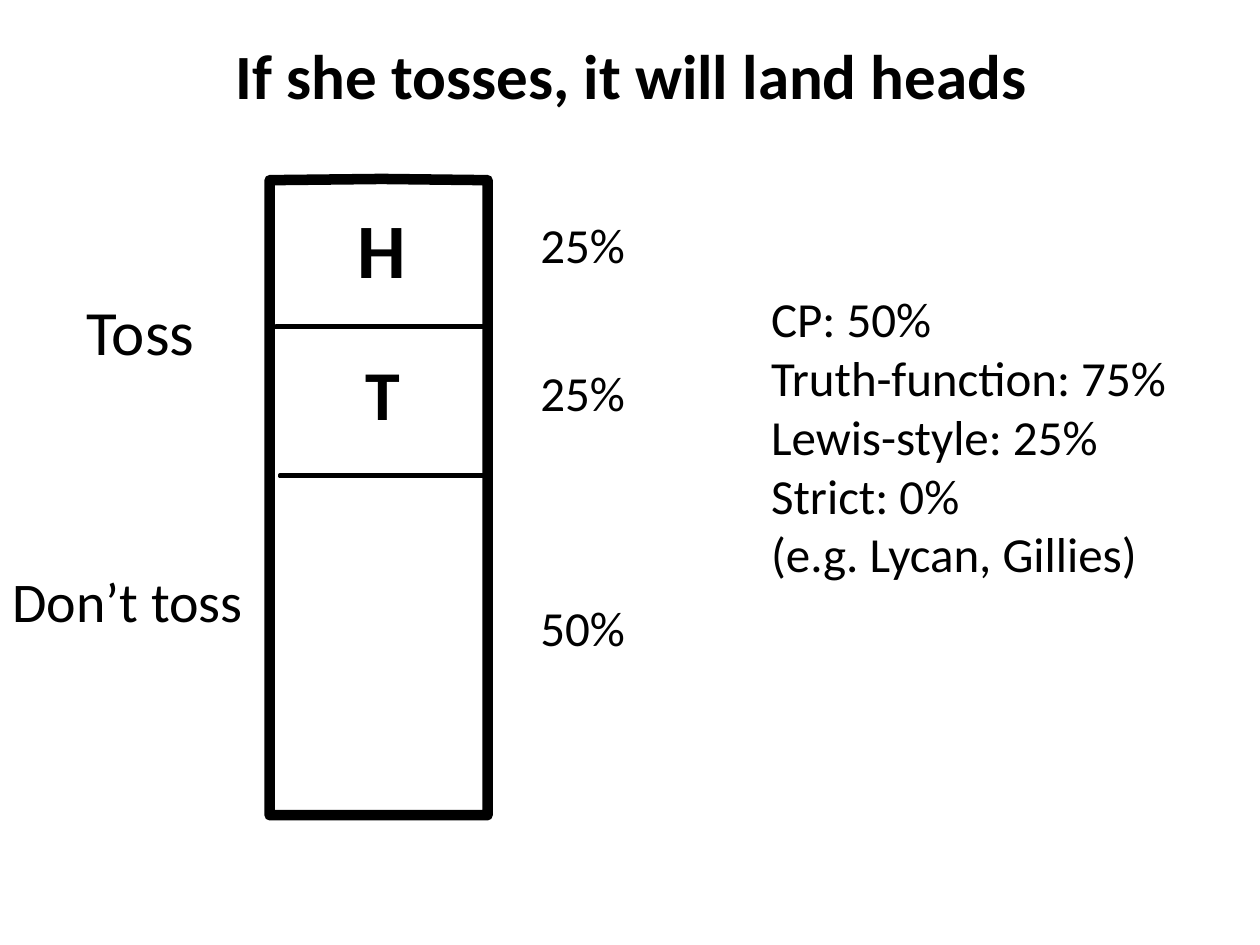
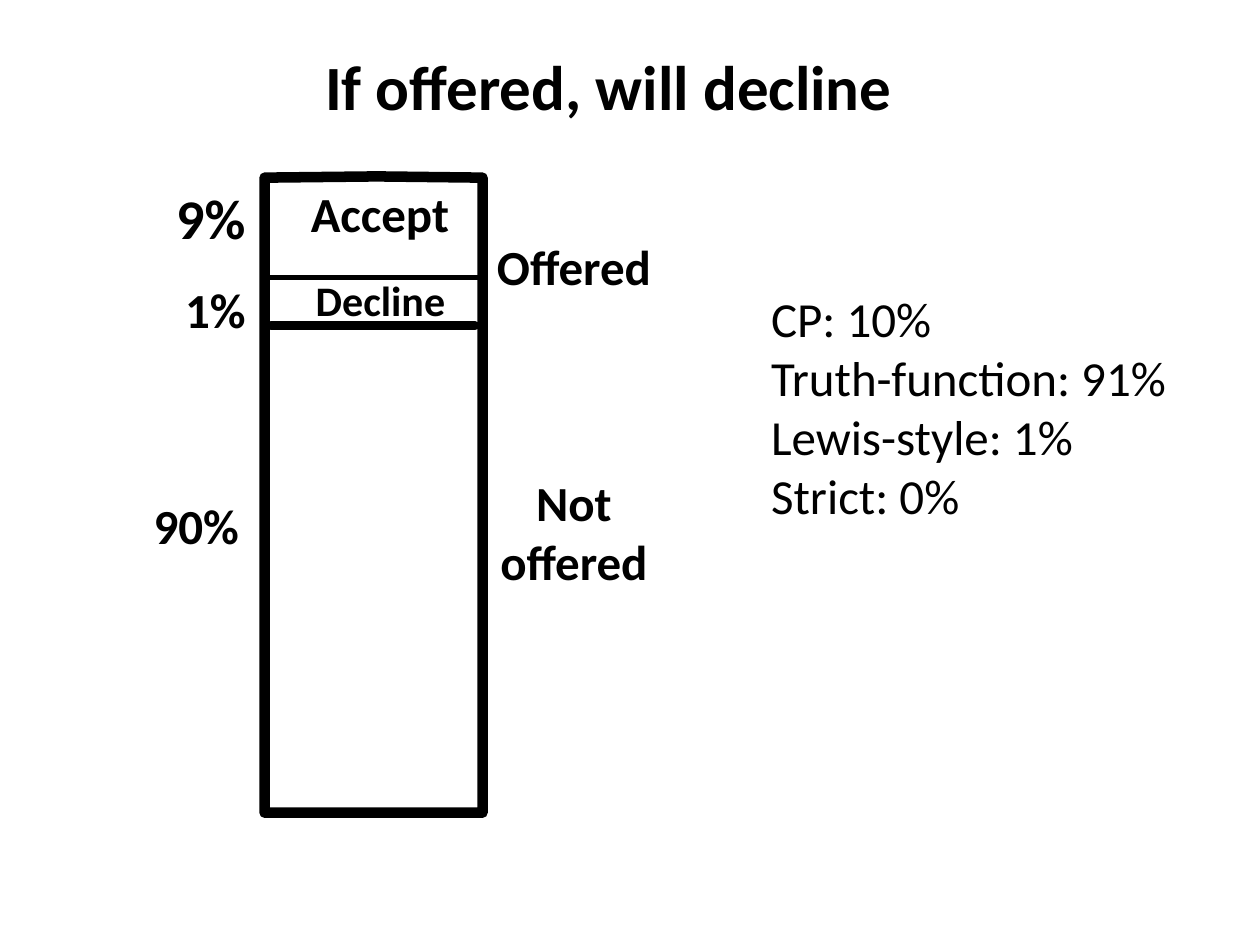
from dataclasses import dataclass

from lxml.etree import SubElement
from pptx import Presentation
from pptx.dml.color import RGBColor
from pptx.enum.shapes import MSO_SHAPE
from pptx.enum.text import MSO_ANCHOR, MSO_AUTO_SIZE, PP_ALIGN
from pptx.oxml.ns import qn
from pptx.util import Pt

PX = 9144  # 100 px to the inch
FONT = "Calibri"
COLORS = {"ink": "000000", "paper": "FFFFFF"}
BAR_WIDTH, BAR_HEIGHT, BAR_BUMP = 173, 504, 89
BAR_LINE, DIVIDER_HEIGHT = 6, 5
RESULTS_LEFT, RESULTS_TOP, RESULTS_WIDTH = 602, 224, 338


@dataclass
class Label:
    text: str
    left: int
    top: int
    width: int
    height: int
    size: int = 28
    bold: bool = True
    wrap: bool = True
    centered: bool = False
    gaps: tuple[int, ...] = ()  # points above each paragraph


@dataclass
class Divider:
    left: int
    top: int
    width: int
    weight: float = 2


@dataclass
class Page:
    title: Label
    results: Label
    bar_left: int
    bar_top: int
    dividers: list[Divider]
    labels: list[Label]


def results_label(text: str, height: int) -> Label:
    return Label(text, RESULTS_LEFT, RESULTS_TOP, RESULTS_WIDTH, height,
                 bold=False, wrap=False)


PAGES = [
    Page(
        title=Label("If she tosses, it will land heads", 177, 24, 655, 71, 36, wrap=False),
        results=results_label("CP: 50%\nTruth-function: 75%\nLewis-style: 25%\n"
                              "Strict: 0%\n(e.g. Lycan, Gillies)", 246),
        bar_left=214,
        bar_top=143,
        dividers=[Divider(189, 257, 228), Divider(193, 375, 220)],
        labels=[
            Label("H", 274, 155, 53, 84, 44),
            Label("T", 280, 273, 61, 77, 40),
            Label("Toss", 59, 227, 118, 71, 36, bold=False),
            Label("Don’t toss", 0, 445, 220, 64, 32, bold=False),
            Label("25%\n25%\n50%", 419, 165, 88, 364, bold=False, wrap=False,
                  gaps=(0, 51, 101)),
        ],
    ),
    Page(
        title=Label("If offered, will decline", 248, 33, 477, 71, 36, wrap=False),
        results=results_label("CP: 10%\nTruth-function: 91%\nLewis-style: 1%\nStrict: 0%", 199),
        bar_left=210,
        bar_top=141,
        dividers=[Divider(182, 218, 228), Divider(186, 256, 220, 4.5)],
        labels=[
            Label("Accept", 217, 141, 169, 57, centered=True),
            Label("Decline", 220, 213, 164, 50, 24, centered=True),
            Label("9%", 130, 141, 79, 64, 32),
            Label("90%", 112, 388, 91, 57),
            Label("1%", 137, 217, 68, 57, wrap=False),
            Label("Offered\nNot\noffered", 383, 183, 145, 293, wrap=False,
                  centered=True, gaps=(0, 101, 0)),
        ],
    ),
]


def color(name: str) -> RGBColor:
    return RGBColor.from_string(COLORS[name])


def write_text(box, text: str, *, size: int, bold: bool, wrap: bool,
               centered: bool, gaps: tuple[int, ...]) -> None:
    frame = box.text_frame
    frame.text = text
    frame.word_wrap = wrap
    frame.auto_size = MSO_AUTO_SIZE.SHAPE_TO_FIT_TEXT
    frame.vertical_anchor = MSO_ANCHOR.TOP
    for index, para in enumerate(frame.paragraphs):
        para.alignment = PP_ALIGN.CENTER if centered else PP_ALIGN.LEFT
        para.space_before = Pt(gaps[index] if gaps else 0)
        for span in para.runs:
            span.font.name = FONT
            span.font.size = Pt(size)
            span.font.bold = bold
            span.font.color.rgb = color("ink")


def fill_label(box, label: Label) -> None:
    box.left, box.top = label.left * PX, label.top * PX
    box.width, box.height = label.width * PX, label.height * PX
    write_text(box, label.text, size=label.size, bold=label.bold, wrap=label.wrap,
               centered=label.centered, gaps=label.gaps)


def remove_bullets(box) -> None:
    for para in box.text_frame.paragraphs:
        properties = para._p.get_or_add_pPr()
        properties.set("marL", "0")
        properties.set("indent", "0")
        SubElement(properties, qn("a:buNone"))


def paint(shape, fill: str, weight: float) -> None:
    shape.shadow.inherit = False
    shape.fill.solid()
    shape.fill.fore_color.rgb = color(fill)
    shape.line.color.rgb = color("ink")
    shape.line.width = Pt(weight)


def draw_bar(slide, left: int, top: int) -> None:
    right, bottom = left + BAR_WIDTH, top + BAR_HEIGHT
    outline = slide.shapes.build_freeform(left, top, scale=PX)
    outline.add_line_segments([(left + BAR_BUMP, top - 1), (right, top),
                               (right, bottom), (left, bottom)], close=True)
    paint(outline.convert_to_shape(), "paper", BAR_LINE)


def draw_divider(slide, divider: Divider) -> None:
    shape = slide.shapes.add_shape(MSO_SHAPE.MATH_MINUS, divider.left * PX, divider.top * PX,
                                   divider.width * PX, DIVIDER_HEIGHT * PX)
    paint(shape, "ink", divider.weight)


def draw_page(deck, page: Page) -> None:
    slide = deck.slides.add_slide(deck.slide_layouts[1])

    # Title and list of results
    fill_label(slide.shapes.title, page.title)
    results = slide.placeholders[1]
    fill_label(results, page.results)
    remove_bullets(results)

    # Probability bar with its dividers and labels
    draw_bar(slide, page.bar_left, page.bar_top)
    for divider in page.dividers:
        draw_divider(slide, divider)
    for label in page.labels:
        fill_label(slide.shapes.add_textbox(0, 0, PX, PX), label)


def main() -> None:
    deck = Presentation()
    deck.slide_width, deck.slide_height = 1000 * PX, 750 * PX
    for page in PAGES:
        draw_page(deck, page)
    deck.save("out.pptx")


if __name__ == "__main__":
    main()
